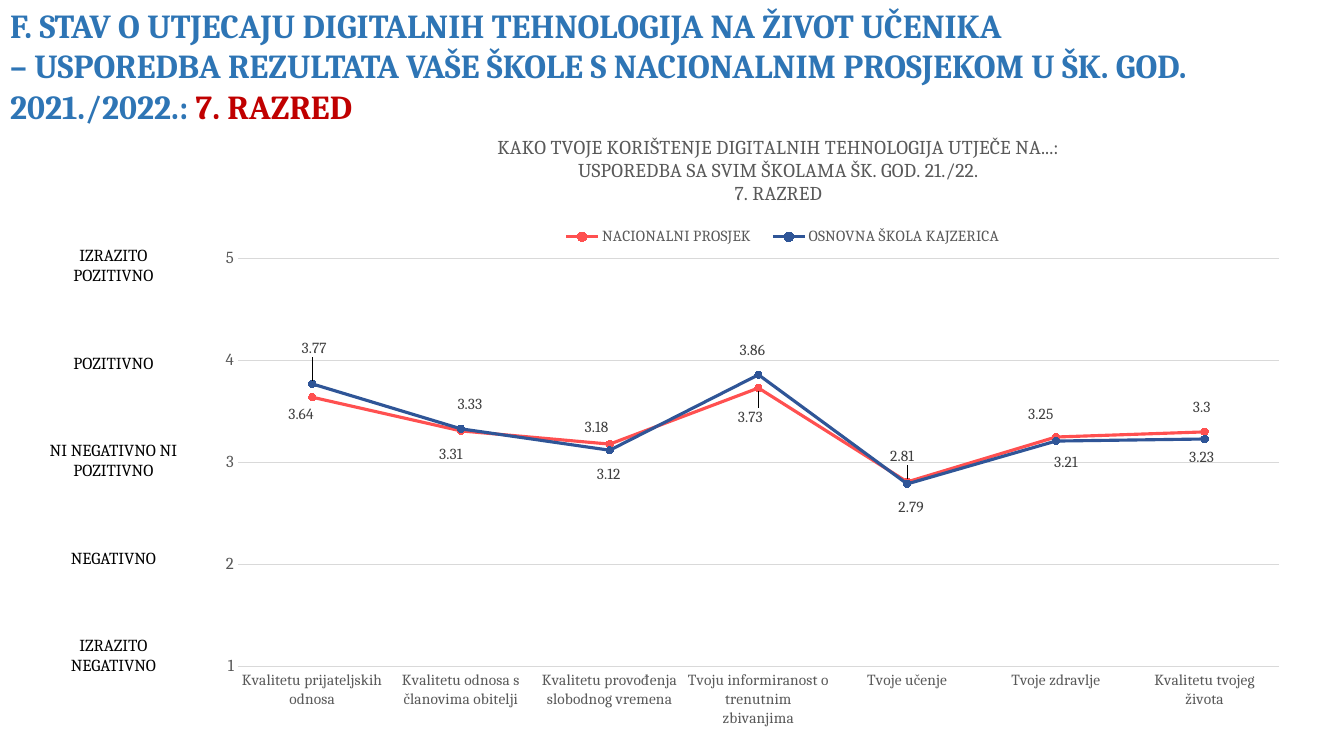
from lxml import etree
from pptx import Presentation
from pptx import util as u
from pptx.chart.data import CategoryChartData
from pptx.dml.color import RGBColor
from pptx.enum import chart as charts, text
from pptx.oxml.ns import qn

FONT = "Cambria"
BLUE, RED, GREY, GRID = "2E75B5", "C00000", "595959", "D9D9D9"
HEADING = [
    [("F. STAV O UTJECAJU DIGITALNIH TEHNOLOGIJA NA ŽIVOT UČENIKA", BLUE)],
    [("– USPOREDBA REZULTATA VAŠE ŠKOLE S NACIONALNIM PROSJEKOM U ŠK. GOD. 2021./2022.: ", BLUE),
     ("7. RAZRED", RED)],
]
SCALE = ["IZRAZITO POZITIVNO", "POZITIVNO", "NI NEGATIVNO NI POZITIVNO", "NEGATIVNO", "IZRAZITO NEGATIVNO"]
CHART_TITLE = [
    "KAKO TVOJE KORIŠTENJE DIGITALNIH TEHNOLOGIJA UTJEČE NA...:",
    "USPOREDBA SA SVIM ŠKOLAMA ŠK. GOD. 21./22.",
    "7. RAZRED",
]
CATEGORIES = [
    "Kvalitetu prijateljskih odnosa", "Kvalitetu odnosa s članovima obitelji",
    "Kvalitetu provođenja slobodnog vremena", "Tvoju informiranost o trenutnim zbivanjima",
    "Tvoje učenje", "Tvoje zdravlje", "Kvalitetu tvojeg života",
]
LABEL_GAP = 0.17
SERIES = {
    "NACIONALNI PROSJEK": ("FF5050", [
        (3.64, -0.11, 0.17), (3.31, -0.1, 0.23), (3.18, -0.13, -0.17), (3.73, -0.08, 0.29),
        (2.81, -0.05, -0.26), (3.25, -0.15, -0.23), (3.3, -0.03, -0.25)]),
    "OSNOVNA ŠKOLA KAJZERICA": ("2F5597", [
        (3.77, 0.02, -0.36), (3.33, 0.09, -0.25), (3.12, -0.01, 0.24), (3.86, -0.06, -0.25),
        (2.79, 0.04, 0.23), (3.21, 0.1, 0.21), (3.23, -0.03, 0.18)]),
}


def rgb(value):
    """Turn a hex string into a colour."""
    return RGBColor.from_string(value)


def style_font(font, size, color, bold=False):
    """Format a font."""
    font.name, font.size, font.bold = FONT, u.Pt(size), bold
    font.color.rgb = rgb(color)


def write(paragraph, content, size=12, color="000000", bold=False, align=None, before=0):
    """Add a formatted run to a paragraph."""
    paragraph.alignment = align
    paragraph.space_before = u.Pt(before)
    run = paragraph.add_run()
    run.text = content
    style_font(run.font, size, color, bold)


def paragraphs(frame, count):
    """Return the given number of paragraphs of an empty text frame."""
    return [frame.paragraphs[0]] + [frame.add_paragraph() for _ in range(count - 1)]


def place(element, index, edge=True, **fractions):
    """Give a chart element a manual layout."""
    for old in element.findall(qn("c:layout")):
        element.remove(old)
    layout = etree.Element(qn("c:layout"))
    manual = etree.SubElement(layout, qn("c:manualLayout"))
    modes = {"xMode": "edge", "yMode": "edge"} if edge else {}
    if element.tag == qn("c:plotArea"):
        modes = {"layoutTarget": "inner", **modes}
    for name, value in {**modes, **fractions}.items():
        etree.SubElement(manual, qn(f"c:{name}"), val=str(value))
    element.insert(index, layout)


def add_heading(slide, left, top, width, height):
    """Fill the title placeholder."""
    title = slide.shapes.title
    title.left, title.top, title.width, title.height = map(u.Inches, (left, top, width, height))
    frame = title.text_frame
    frame.word_wrap = True
    frame.auto_size = text.MSO_AUTO_SIZE.NONE
    frame.vertical_anchor = text.MSO_ANCHOR.TOP
    for paragraph, runs in zip(paragraphs(frame, len(HEADING)), HEADING):
        for content, color in runs:
            write(paragraph, content, size=24, color=color, bold=True, align=text.PP_ALIGN.LEFT)


def add_scale(slide, left, top, width, height):
    """Add the wording of the rating scale beside the chart."""
    frame = slide.shapes.add_textbox(*map(u.Inches, (left, top, width, height))).text_frame
    frame.word_wrap = True
    for number, paragraph in enumerate(paragraphs(frame, len(SCALE))):
        write(paragraph, SCALE[number], align=text.PP_ALIGN.CENTER, before=48 if number else 0)


def style_axes(chart):
    """Format both axes and the gridlines."""
    category, value = chart.category_axis, chart.value_axis
    value.minimum_scale, value.maximum_scale, value.major_unit = 1, 5, 1
    for axis, size in ((category, 11), (value, 12)):
        axis.major_tick_mark = axis.minor_tick_mark = charts.XL_TICK_MARK.NONE
        style_font(axis.tick_labels.font, size, GREY)
    value.format.line.fill.background()
    for line in (category.format.line, value.major_gridlines.format.line):
        line.color.rgb, line.width = rgb(GRID), u.Pt(0.75)


def style_series(series, color, points, width, height):
    """Format a line with its markers and place its value labels."""
    series.smooth = False
    series.format.line.color.rgb, series.format.line.width = rgb(color), u.Pt(2.25)
    series.marker.style, series.marker.size = charts.XL_MARKER_STYLE.CIRCLE, 5
    series.marker.format.fill.solid()
    series.marker.format.fill.fore_color.rgb = rgb(color)
    series.marker.format.line.color.rgb = rgb(color)
    for index, (_, across, down) in enumerate(points):
        label = series.points[index].data_label
        style_font(label.font, 11, "404040")
        position = charts.XL_LABEL_POSITION
        label.position = position.BELOW if down > 0 else position.ABOVE
        gap = LABEL_GAP if down > 0 else -LABEL_GAP
        element = series._element.xpath(f"c:dLbls/c:dLbl[c:idx/@val='{index}']")[0]
        place(element, 1, edge=False, x=round(across / width, 4), y=round((down - gap) / height, 4))


def add_comparison(slide, left, top, width, height):
    """Add the line chart comparing the school with the national average."""
    data = CategoryChartData()
    data.categories = CATEGORIES
    for name, (_, points) in SERIES.items():
        data.add_series(name, [point[0] for point in points])
    box = map(u.Inches, (left, top, width, height))
    chart = slide.shapes.add_chart(charts.XL_CHART_TYPE.LINE_MARKERS, *box, data).chart
    style_font(chart.font, 10, "000000")
    chart.plots[0].vary_by_categories = False
    frame = chart.chart_title.text_frame
    for paragraph, content in zip(paragraphs(frame, len(CHART_TITLE)), CHART_TITLE):
        write(paragraph, content, size=14, color=GREY)
    chart.has_legend = True
    chart.legend.position = charts.XL_LEGEND_POSITION.TOP
    chart.legend.include_in_layout = False
    style_font(chart.legend.font, 11, GREY)
    style_axes(chart)
    for series, (color, points) in zip(chart.plots[0].series, SERIES.values()):
        style_series(series, color, points, width, height)
    root = chart._chartSpace
    place(root.xpath("c:chart/c:title")[0], 1, x=0.27, y=0.02)
    place(root.xpath("c:chart/c:legend")[0], 1, x=0.32, y=0.16, w=0.42, h=0.05)
    place(root.xpath("c:chart/c:plotArea")[0], 0, x=0.039, y=0.219, w=0.938, h=0.641)


def main():
    """Build and save the slide."""
    presentation = Presentation()
    presentation.slide_width, presentation.slide_height = u.Inches(13.33), u.Inches(7.5)
    slide = presentation.slides.add_slide(presentation.slide_layouts[5])
    add_heading(slide, 0, 0, 12.48, 1.31)
    add_scale(slide, 0.39, 2.38, 1.47, 4.41)
    add_comparison(slide, 1.93, 1.18, 11.01, 6.32)
    presentation.save("out.pptx")


if __name__ == "__main__":
    main()
